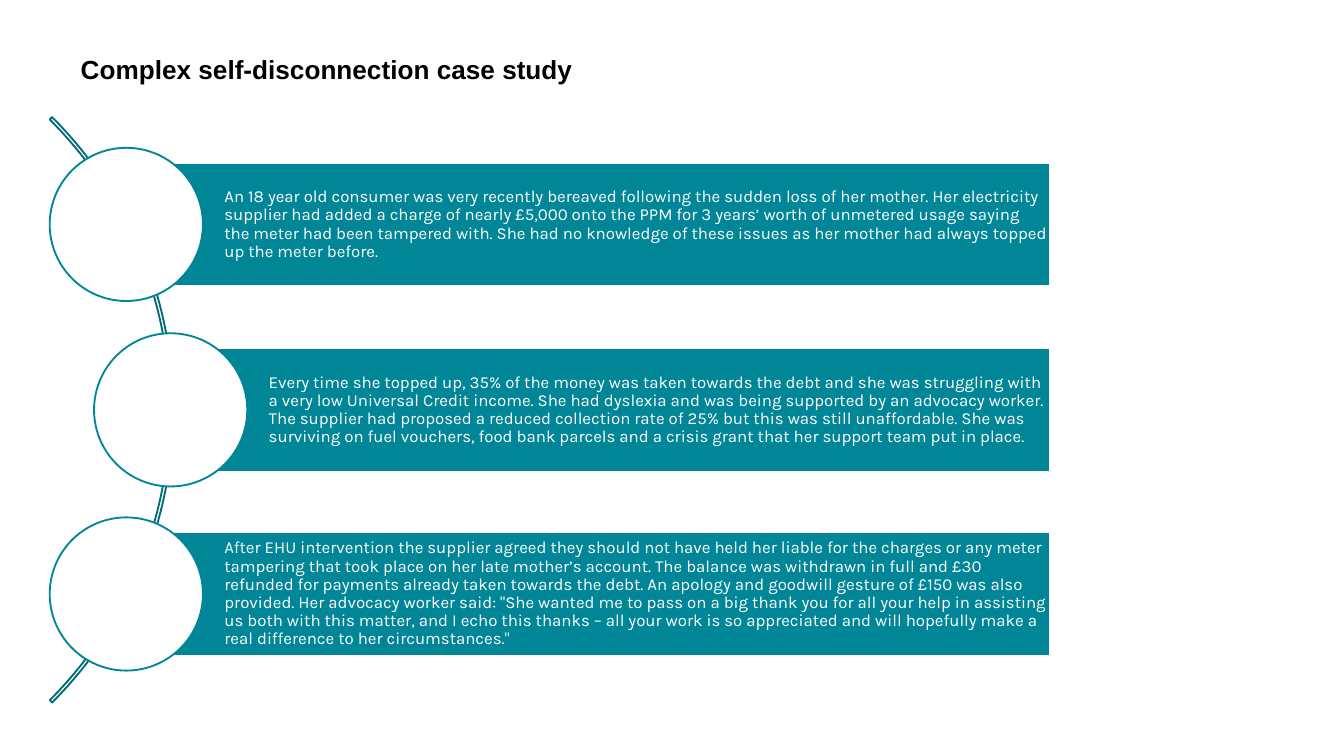
"""Builds the self-disconnection case study slide."""
from dataclasses import dataclass

from pptx import Presentation
from pptx.dml.color import RGBColor
from pptx.enum.shapes import MSO_SHAPE as Kind
from pptx.enum.text import MSO_ANCHOR as Anchor, PP_ALIGN as Align
from pptx.util import Inches, Pt

TEAL = "008697"
DARK = "006B79"
WHITE = "FFFFFF"
BLACK = "000000"
WIDE = 10
RIGHT = 7.81
TALL = 0.92
DISC = 1.14
ARC = 6.16


@dataclass
class Step:
    left: float
    mid: float
    text: str


STEPS = [
    Step(0.94, 1.67, "An 18 year old consumer was very recently bereaved following the sudden "
         "loss of her mother. Her electricity supplier had added a charge of nearly £5,000 "
         "onto the PPM for 3 years’ worth of unmetered usage saying the meter had been "
         "tampered with. She had no knowledge of these issues as her mother had always "
         "topped up the meter before."),
    Step(1.27, 3.05, "Every time she topped up, 35% of the money was taken towards the debt "
         "and she was struggling with a very low Universal Credit income. She had dyslexia "
         "and was being supported by an advocacy worker. The supplier had proposed a reduced "
         "collection rate of 25% but this was still unaffordable. She was surviving on fuel "
         "vouchers, food bank parcels and a crisis grant that her support team put in place."),
    Step(0.94, 4.42, "After EHU intervention the supplier agreed they should not have held her "
         "liable for the charges or any meter tampering that took place on her late mother’s "
         "account. The balance was withdrawn in full and £30 refunded for payments already "
         "taken towards the debt. An apology and goodwill gesture of £150 was also provided. "
         "Her advocacy worker said: \"She wanted me to pass on a big thank you for all your "
         "help in assisting us both with this matter, and I echo this thanks – all your work "
         "is so appreciated and will hopefully make a real difference to her "
         "circumstances.\""),
]


def color(code: str) -> RGBColor:
    return RGBColor.from_string(code)


def add_run(para, text: str, face: str, size: float, code: str, bold: bool = False) -> None:
    run = para.add_run()
    run.text = text
    run.font.name = face
    run.font.size = Pt(size)
    run.font.bold = bold
    run.font.color.rgb = color(code)


def add_form(slide, kind, box: tuple, line: str, fill: str | None = None):
    form = slide.shapes.add_shape(kind, *map(Inches, box))
    form.shadow.inherit = False
    if fill:
        form.fill.solid()
        form.fill.fore_color.rgb = color(fill)
    else:
        form.fill.background()
    form.line.color.rgb = color(line)
    form.line.width = Pt(1)
    return form


def add_title(slide, text: str) -> None:
    title = slide.shapes.title
    title.left, title.top = Inches(0.5), Inches(0.35)
    title.width, title.height = Inches(6.52), Inches(0.4)
    frame = title.text_frame
    frame.word_wrap = True
    frame.vertical_anchor = Anchor.TOP
    para = frame.paragraphs[0]
    para.alignment = Align.LEFT
    add_run(para, text, "Arial", 14, BLACK, True)


def add_arc(slide, mid: float) -> None:
    arc = add_form(slide, Kind.BLOCK_ARC, (-4.87, mid - ARC / 2, ARC, ARC), DARK)
    for i, value in enumerate((189, 27, 0.004)):
        arc.adjustments[i] = value


def add_step(slide, step: Step) -> None:
    box = (step.left, step.mid - TALL / 2, RIGHT - step.left, TALL)
    bar = add_form(slide, Kind.RECTANGLE, box, WHITE, TEAL)
    frame = bar.text_frame
    frame.word_wrap = True
    frame.vertical_anchor = Anchor.MIDDLE
    frame.margin_left = Inches(0.73)
    frame.margin_right = Inches(0.02)
    frame.margin_top = frame.margin_bottom = Inches(0.03)
    para = frame.paragraphs[0]
    para.alignment = Align.LEFT
    para.line_spacing = 0.9
    add_run(para, step.text, "Karla", 9, WHITE)
    half = DISC / 2
    add_form(slide, Kind.OVAL, (step.left - half, step.mid - half, DISC, DISC), TEAL, WHITE)


def main() -> None:
    deck = Presentation()
    deck.slide_width, deck.slide_height = Inches(WIDE), Inches(WIDE * 9 / 16)
    slide = deck.slides.add_slide(deck.slide_layouts[5])
    add_title(slide, "Complex self-disconnection case study")
    add_arc(slide, STEPS[1].mid)
    for step in STEPS:
        add_step(slide, step)
    deck.save("out.pptx")


if __name__ == "__main__":
    main()
